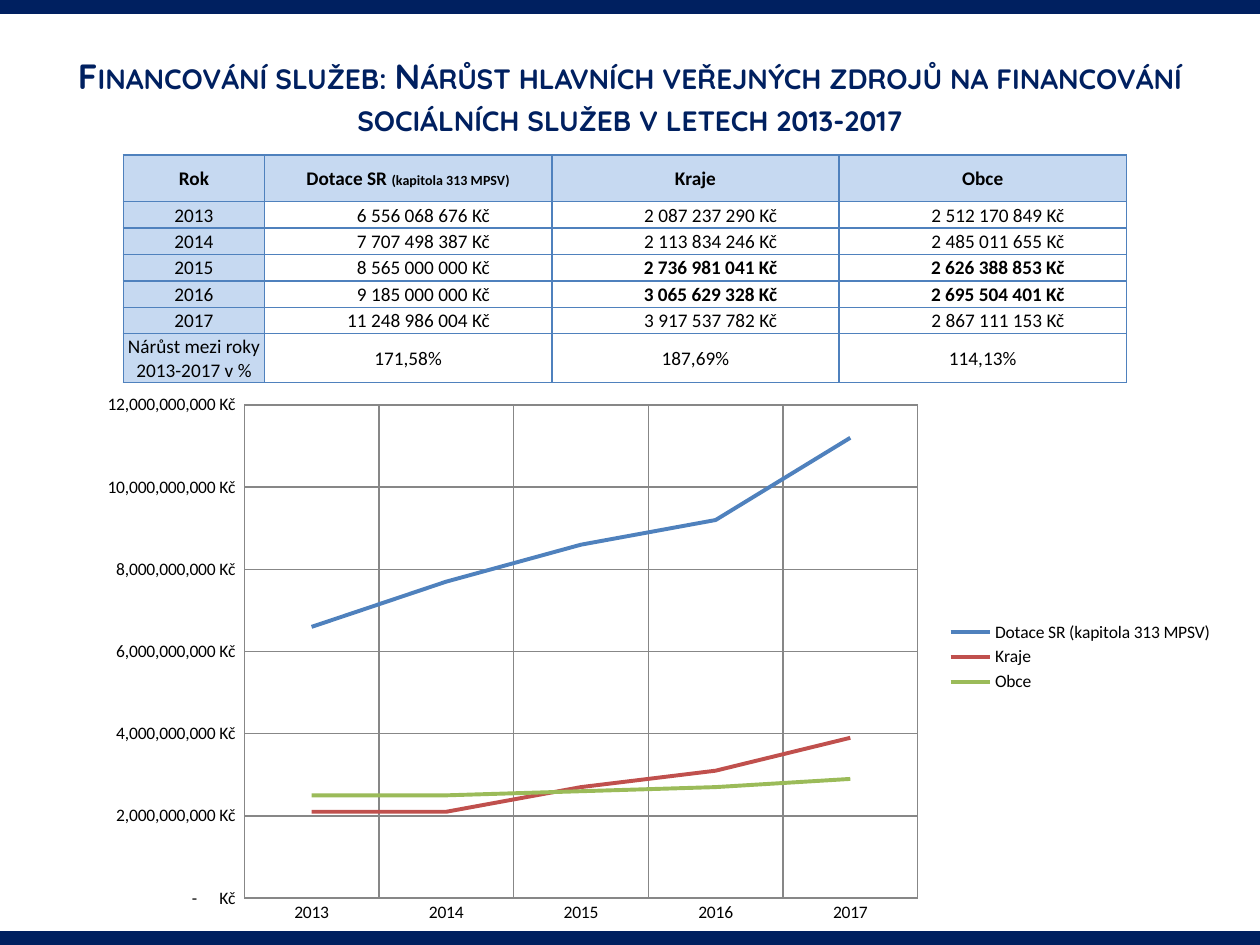
"""Build a slide on the growth of public funding of social services, 2013-2017."""
from lxml.etree import SubElement
from pptx import Presentation
from pptx.chart.data import CategoryChartData
from pptx.dml.color import RGBColor
from pptx.enum.chart import XL_CHART_TYPE, XL_LEGEND_POSITION, XL_TICK_MARK
from pptx.enum.shapes import MSO_SHAPE
from pptx.enum.text import MSO_ANCHOR, MSO_AUTO_SIZE, PP_ALIGN
from pptx.oxml import parse_xml
from pptx.oxml.ns import nsdecls, qn
from pptx.util import Inches, Pt

TITLE = ("Financování služeb: Nárůst hlavních veřejných zdrojů na financování "
         "sociálních služeb v letech 2013-2017")
NAVY, BLACK, PALE, BLUE, GRAY = "002060", "000000", "C6D9F1", "4F81BD", "878787"
YEARS = ["2013", "2014", "2015", "2016", "2017"]
SOURCES = [
    ("Dotace SR ", "(kapitola 313 MPSV)", BLUE, "171,58%",
     [6556068676, 7707498387, 8565000000, 9185000000, 11248986004]),
    ("Kraje", "", "C0504D", "187,69%",
     [2087237290, 2113834246, 2736981041, 3065629328, 3917537782]),
    ("Obce", "", "9BBB59", "114,13%",
     [2512170849, 2485011655, 2626388853, 2695504401, 2867111153]),
]
GROWTH = "Nárůst mezi roky 2013-2017 v %"
BOLD_YEARS = {"2015", "2016"}
COLS = [1.12] + [2.28] * 3
ROWS = [0.37] + [0.21] * 5 + [0.38]
PLOT = {"x": 0.14, "y": 0.04, "w": 0.59, "h": 0.9}
MONEY = r'_-* #,##0\ "Kč"_-;\-* #,##0\ "Kč"_-;_-* "-"??\ "Kč"_-;_-@_-'


def rgb(value):
    """Turn a hex string into a colour."""
    return RGBColor.from_string(value)


def style(font, size, color=BLACK, bold=False, name="Calibri"):
    """Set the look of a font."""
    font.size, font.bold, font.name = Pt(size), bold, name
    font.color.rgb = rgb(color)


def add_bar(s, top, width, height):
    """Draw a band across the slide."""
    sp = s.shapes.add_shape(MSO_SHAPE.RECTANGLE, 0, top, width, height)
    sp.shadow.inherit = False
    sp.fill.solid()
    sp.fill.fore_color.rgb = rgb(NAVY)
    sp.line.fill.background()


def fill_cell(cell, parts, shaded=False, bold=False, amount=False):
    """Write text parts of (text, size) into a bordered cell."""
    cell.margin_left = cell.margin_top = Inches(0.01)
    cell.margin_right = Inches(0.49 if amount else 0.01)
    cell.margin_bottom = 0
    cell.vertical_anchor = MSO_ANCHOR.MIDDLE
    p = cell.text_frame.paragraphs[0]
    p.alignment = PP_ALIGN.RIGHT if amount else PP_ALIGN.CENTER
    for text, size in parts:
        r = p.add_run()
        r.text = text
        style(r.font, size, bold=bold)
    tcPr = cell._tc.get_or_add_tcPr()
    for side in ("lnL", "lnR", "lnT", "lnB"):
        tcPr.append(parse_xml(
            f'<a:{side} {nsdecls("a")} w="12700"><a:solidFill>'
            f'<a:srgbClr val="{BLUE}"/></a:solidFill></a:{side}>'))
    if shaded:
        cell.fill.solid()
        cell.fill.fore_color.rgb = rgb(PALE)
    else:
        cell.fill.background()


def add_funding_table(s):
    """Add the table of yearly amounts and growth."""
    table = s.shapes.add_table(len(ROWS), len(COLS), Inches(0.98), Inches(1.23),
                               Inches(sum(COLS)), Inches(sum(ROWS))).table
    table.first_row = table.horz_banding = False
    for col, width in zip(table.columns, COLS):
        col.width = Inches(width)
    for row, height in zip(table.rows, ROWS):
        row.height = Inches(height)
    for i, label in enumerate(["Rok", *YEARS, GROWTH]):
        fill_cell(table.cell(i, 0), [(label, 11)], shaded=True, bold=i == 0)
    for j, (name, note, _, growth, amounts) in enumerate(SOURCES, 1):
        parts = [(name, 11)] + ([(note, 8)] if note else [])
        fill_cell(table.cell(0, j), parts, shaded=True, bold=True)
        for i, (year, amount) in enumerate(zip(YEARS, amounts), 1):
            text = f"{amount:,} Kč".replace(",", " ")
            fill_cell(table.cell(i, j), [(text, 11)], amount=True,
                      bold=j > 1 and year in BOLD_YEARS)
        fill_cell(table.cell(len(ROWS) - 1, j), [(growth, 11)])


def add_funding_chart(s):
    """Add the line chart of the amounts, rounded to hundreds of millions."""
    data = CategoryChartData(number_format=MONEY)
    data.categories = YEARS
    for name, note, _, _, amounts in SOURCES:
        data.add_series(name + note, [round(amount, -8) for amount in amounts])
    chart = s.shapes.add_chart(XL_CHART_TYPE.LINE, Inches(0.67), Inches(3.04),
                               Inches(9.06), Inches(4.35), data).chart
    style(chart.font, 10)
    chart.has_title = False
    chart.has_legend = True
    chart.legend.position = XL_LEGEND_POSITION.RIGHT
    chart.legend.include_in_layout = False
    plot = chart.plots[0]
    plot.vary_by_categories = False
    for series, source in zip(plot.series, SOURCES):
        series.smooth = False
        series.format.line.width = Pt(2.25)
        series.format.line.color.rgb = rgb(source[2])
    for axis in (chart.category_axis, chart.value_axis):
        axis.has_major_gridlines = True
        axis.major_tick_mark = axis.minor_tick_mark = XL_TICK_MARK.NONE
        for line in (axis.major_gridlines.format.line, axis.format.line):
            line.color.rgb = rgb(GRAY)
            line.width = Pt(0.75)
    values = chart.value_axis
    values.format.line.fill.background()
    values.minimum_scale, values.maximum_scale = 0, 12e9
    values.major_unit = 2e9
    values.tick_labels.number_format = MONEY
    values.tick_labels.number_format_is_linked = False
    area = chart._chartSpace.chart.plotArea
    for old in area.findall(qn("c:layout")):
        area.remove(old)
    layout = parse_xml(f'<c:layout {nsdecls("c")}><c:manualLayout/></c:layout>')
    settings = {"layoutTarget": "inner", "xMode": "edge", "yMode": "edge", **PLOT}
    for tag, value in settings.items():
        SubElement(layout[0], qn(f"c:{tag}")).set("val", str(value))
    area.insert(0, layout)


def main():
    """Assemble and save the slide."""
    prs = Presentation()
    prs.slide_width, prs.slide_height = Inches(10), Inches(7.5)
    s = prs.slides.add_slide(prs.slide_layouts[5])
    title = s.shapes.title
    title.left, title.top = Inches(0.5), Inches(0.3)
    title.width, title.height = Inches(9), Inches(0.93)
    tf = title.text_frame
    tf.text = TITLE
    tf.auto_size = MSO_AUTO_SIZE.NONE
    tf.vertical_anchor = MSO_ANCHOR.MIDDLE
    p = tf.paragraphs[0]
    p.alignment = PP_ALIGN.CENTER
    style(p.runs[0].font, 20, NAVY, True, "Quicksand")
    p.runs[0]._r.get_or_add_rPr().set("cap", "small")
    band = Inches(0.11)
    for top in (0, prs.slide_height - band):
        add_bar(s, top, prs.slide_width, band)
    add_funding_table(s)
    add_funding_chart(s)
    prs.save("out.pptx")


if __name__ == "__main__":
    main()
